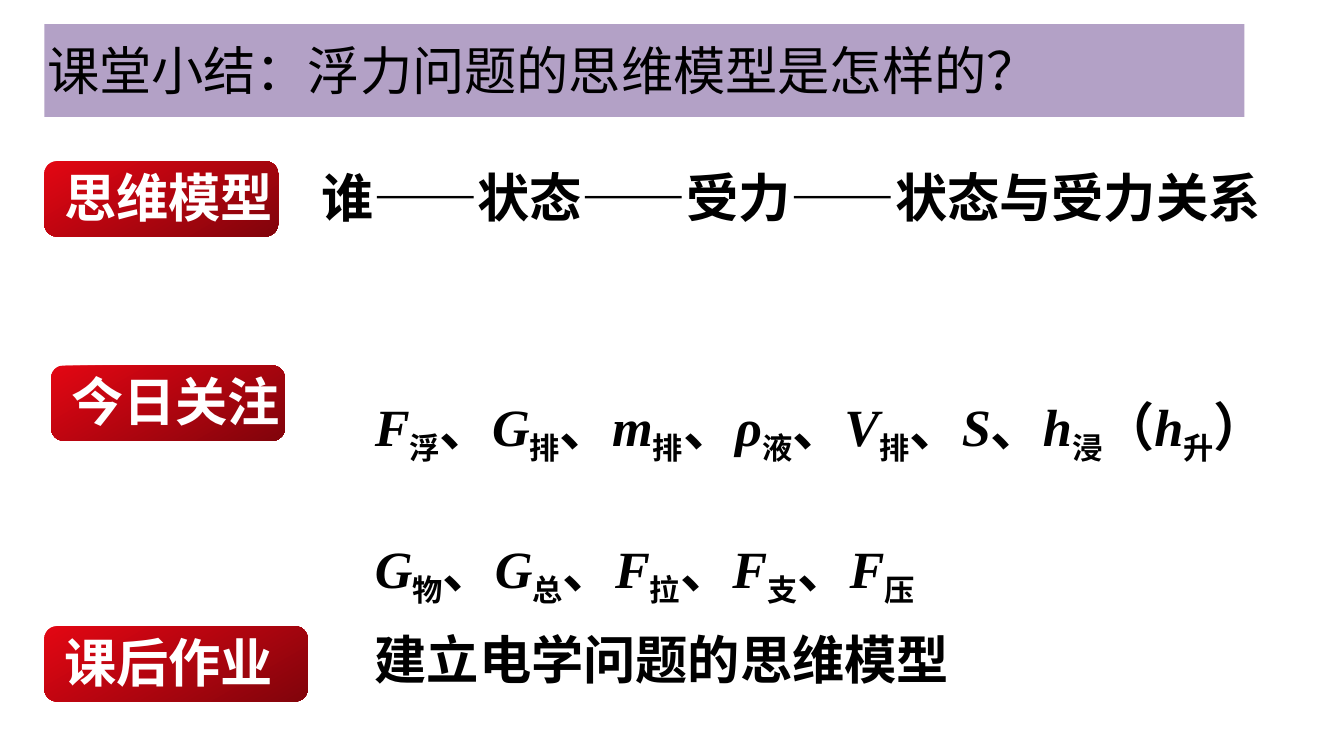
from pptx import Presentation
from pptx.dml.color import RGBColor
from pptx.enum.shapes import MSO_SHAPE
from pptx.enum.text import MSO_ANCHOR, PP_ALIGN
from pptx.oxml.ns import qn
from pptx.util import Inches, Pt
from lxml import etree

RECT, ROUND = MSO_SHAPE.RECTANGLE, MSO_SHAPE.ROUNDED_RECTANGLE
TOP, MIDDLE = MSO_ANCHOR.TOP, MSO_ANCHOR.MIDDLE
JUSTIFY = PP_ALIGN.JUSTIFY

BLACK = RGBColor(0x00, 0x00, 0x00)
WHITE = RGBColor(0xFF, 0xFF, 0xFF)
LILAC = RGBColor(0xB3, 0xA1, 0xC6)
RED = RGBColor(0xE3, 0x06, 0x13)
DARK = RGBColor(0x81, 0x04, 0x0B)
HAN, HEAD = "Noto Sans CJK SC", "Noto Sans CJK JP"
LATIN, MATH = "Arial", "Times New Roman"

# Content
TITLE = "课堂小结：浮力问题的思维模型是怎样的？"
# label, left, top, width of its tag
TAGS = [
    ("思维模型", 0.33, 1.2, 1.74),
    ("今日关注", 0.38, 2.72, 1.74),
    ("课后作业", 0.33, 4.66, 1.96),
]
# text, left, top, width
NOTES = [
    ("谁——状态——受力——状态与受力关系", 2.29, 1.18, 7.52),
    ("建立电学问题的思维模型", 2.69, 4.62, 4.72),
]
# symbol, subscript, mark that follows
FORCES = [
    [("F", "浮", "、"), ("G", "排", "、"), ("m", "排", "、"),
     ("ρ", "液", "、"), ("V", "排", "、"), ("S", "", "、"),
     ("h", "浸", "（"), ("h", "升", "）")],
    [("G", "物", "、"), ("G", "总", "、"), ("F", "拉", "、"),
     ("F", "支", "、"), ("F", "压", "")],
]


def style(run, face, color, bold=True, han=HAN):
    font = run.font
    font.name, font.size, font.bold = face, Pt(28), bold
    font.color.rgb = color
    ea = etree.SubElement(run._r.get_or_add_rPr(), qn("a:ea"))
    ea.set("typeface", han)


def place(shape, *box):
    shape.left, shape.top, shape.width, shape.height = map(Inches, box)


def add_box(*box):
    frame = slide.shapes.add_textbox(*map(Inches, box)).text_frame
    frame.word_wrap = True
    frame.vertical_anchor = TOP
    return frame


def add_text(text, face, color, *box):
    frame = add_box(*box)
    frame.text = text
    style(frame.paragraphs[0].runs[0], face, color)


def add_plate(kind, *box):
    shape = slide.shapes.add_shape(kind, *map(Inches, box))
    shape.shadow.inherit = False
    shape.line.fill.background()
    return shape


# A 16:9 slide
deck = Presentation()
deck.slide_width = Inches(10)
deck.slide_height = deck.slide_width * 9 // 16
slide = deck.slides.add_slide(deck.slide_layouts[5])

# Title on its banner
title = slide.shapes.title
place(title, 0.25, 0.29, 8.93, 0.46)
frame = title.text_frame
frame.text = TITLE
frame.vertical_anchor = MIDDLE
head = frame.paragraphs[0]
head.alignment = JUSTIFY
style(head.runs[0], HEAD, BLACK, False, HEAD)
banner = add_plate(RECT, 0.33, 0.18, 8.93, 0.69)
banner.fill.solid()
banner.fill.fore_color.rgb = LILAC
title.element.addprevious(banner.element)

# Red tags with labels
for label, left, top, width in TAGS:
    tag = add_plate(ROUND, left, top, width, 0.56)
    tag.fill.gradient()
    tag.fill.gradient_angle = 300
    for stop, color in zip(tag.fill.gradient_stops, (RED, DARK)):
        stop.color.rgb = color
    add_text(label, HAN, WHITE, left + 0.05, top - 0.02, width + 0.04, 0.57)

# Notes beside the tags
for text, left, top, width in NOTES:
    add_text(text, LATIN, BLACK, left, top, width, 0.57)

# Quantities with subscripts
frame = add_box(2.69, 2.35, 6.89, 1.84)
for row, terms in enumerate(FORCES):
    para = frame.add_paragraph() if row else frame.paragraphs[0]
    para.line_spacing = 2.0
    for term in terms:
        for part, text in zip(("symbol", "sub", "mark"), term):
            if not text:
                continue
            run = para.add_run()
            run.text = text
            style(run, MATH, BLACK)
            run.font.italic = part == "symbol"
            if part == "sub":
                run._r.get_or_add_rPr().set("baseline", "-25000")

deck.save("out.pptx")
